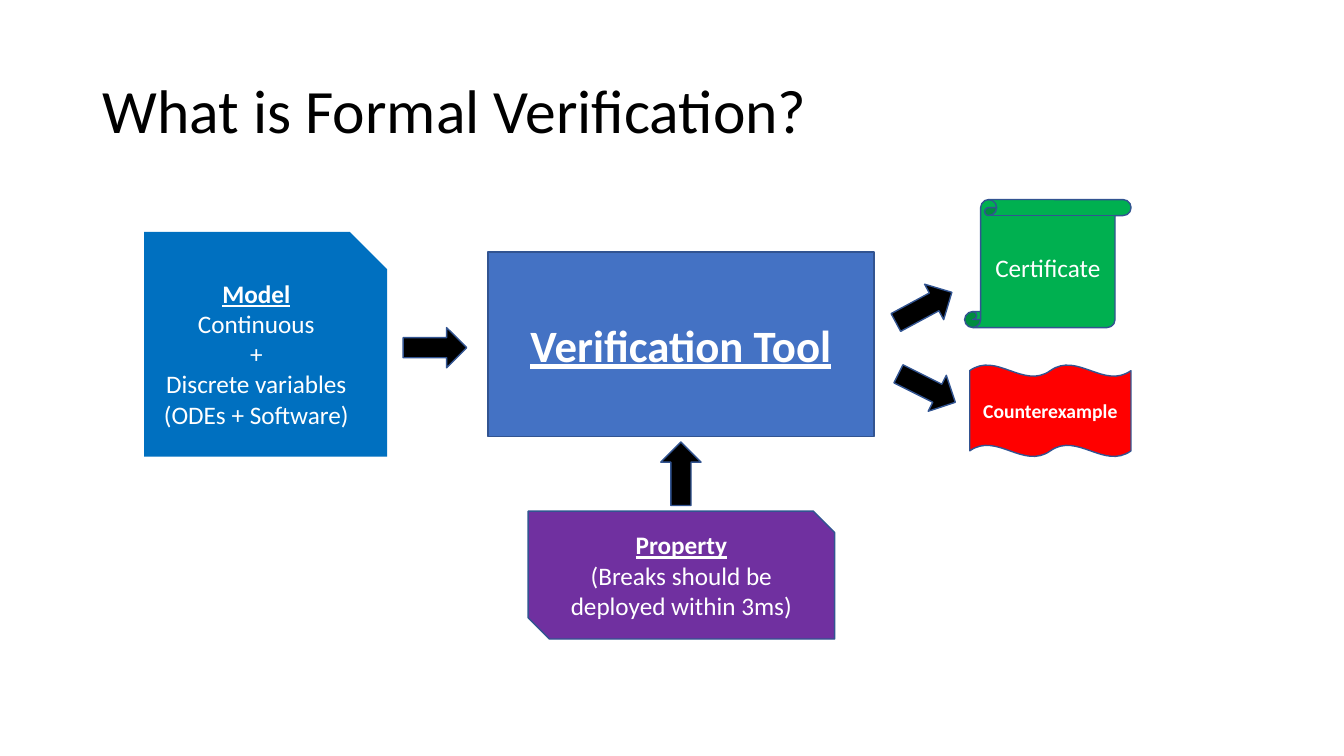
from pptx import Presentation
from pptx.dml.color import RGBColor
from pptx.enum.shapes import MSO_SHAPE
from pptx.enum.text import MSO_ANCHOR, PP_ALIGN
from pptx.util import Inches, Pt

RECT = MSO_SHAPE.RECTANGLE
SNIP = MSO_SHAPE.SNIP_1_RECTANGLE
DIAG = MSO_SHAPE.SNIP_2_DIAG_RECTANGLE
ARROW = MSO_SHAPE.RIGHT_ARROW
SCROLL = MSO_SHAPE.VERTICAL_SCROLL
WAVE = MSO_SHAPE.DOUBLE_WAVE
MIDDLE = MSO_ANCHOR.MIDDLE
LEFT, CENTER = PP_ALIGN.LEFT, PP_ALIGN.CENTER

HEX = {
    "black": "000000", "white": "FFFFFF", "edge": "325491",
    "tool": "4472C4", "model": "0070C0", "rule": "7030A0",
    "proof": "00B050", "fail": "FF0000",
}

TITLE = "What is Formal Verification?"
TITLE_BOX = (6.9, 5.33, 86.25, 19.33)

# kind, box in percent of the slide, fill, edge, heading, body, size
NODES = [
    (RECT, (36.3, 33.33, 28.73, 24.4), "tool", "edge",
     ["Verification Tool"], [], 32),
    (SNIP, (10.73, 30.67, 18.08, 29.73), "model", None,
     ["Model"],
     ["Continuous", "+", "Discrete variables", "(ODEs + Software)"], 18),
    (DIAG, (39.3, 67.6, 22.8, 16.93), "rule", "edge",
     ["Property"], ["(Breaks should be deployed within 3ms)"], 18),
    (SCROLL, (71.78, 26.4, 12.38, 16.93), "proof", "edge",
     [], ["Certificate"], 18),
]
FAIL_BOX = (72.15, 48.27, 12, 12.13)
ARROW_SIZE = (4.73, 5.33)
ARROWS = [
    (30, 43.33, 0), (48.3, 60, 270),
    (66.38, 38, 331.7), (66.6, 48.67, 26.6),
]

deck = Presentation()
deck.slide_width, deck.slide_height = Inches(13.33), Inches(7.5)
slide = deck.slides.add_slide(deck.slide_layouts[5])


def color(name):
    return RGBColor.from_string(HEX[name])


def place(box):
    sides = (deck.slide_width, deck.slide_height) * 2
    return [int(side * part / 100) for side, part in zip(sides, box)]


def write(shape, lines, size=18, tint="white", heads=0, bold=False,
          align=CENTER, gap=None):
    frame = shape.text_frame
    frame.word_wrap = True
    frame.vertical_anchor = MIDDLE
    for i, line in enumerate(lines):
        para = frame.add_paragraph() if i else frame.paragraphs[0]
        para.alignment = align
        para.line_spacing = gap
        run = para.add_run()
        run.text = line
        font = run.font
        font.name, font.size = "Calibri", Pt(size)
        font.color.rgb = color(tint)
        font.bold = bold or i < heads
        font.underline = i < heads


def draw(kind, box, fill, edge="edge", turn=0):
    shape = slide.shapes.add_shape(kind, *place(box))
    shape.shadow.inherit = False
    shape.rotation = turn
    shape.fill.solid()
    shape.fill.fore_color.rgb = color(fill)
    if edge:
        shape.line.color.rgb = color(edge)
        shape.line.width = Pt(1)
    else:
        shape.line.fill.background()
    return shape


title = slide.shapes.title
title.left, title.top, title.width, title.height = place(TITLE_BOX)
write(title, [TITLE], size=44, tint="black", align=LEFT, gap=0.9)

for kind, box, fill, edge, head, body, size in NODES:
    write(draw(kind, box, fill, edge), head + body, size=size, heads=len(head))

write(draw(WAVE, FAIL_BOX, "fail"), ["Counterexample"], size=14, bold=True)

for left, top, turn in ARROWS:
    draw(ARROW, (left, top, *ARROW_SIZE), "black", turn=turn)

deck.save("out.pptx")
